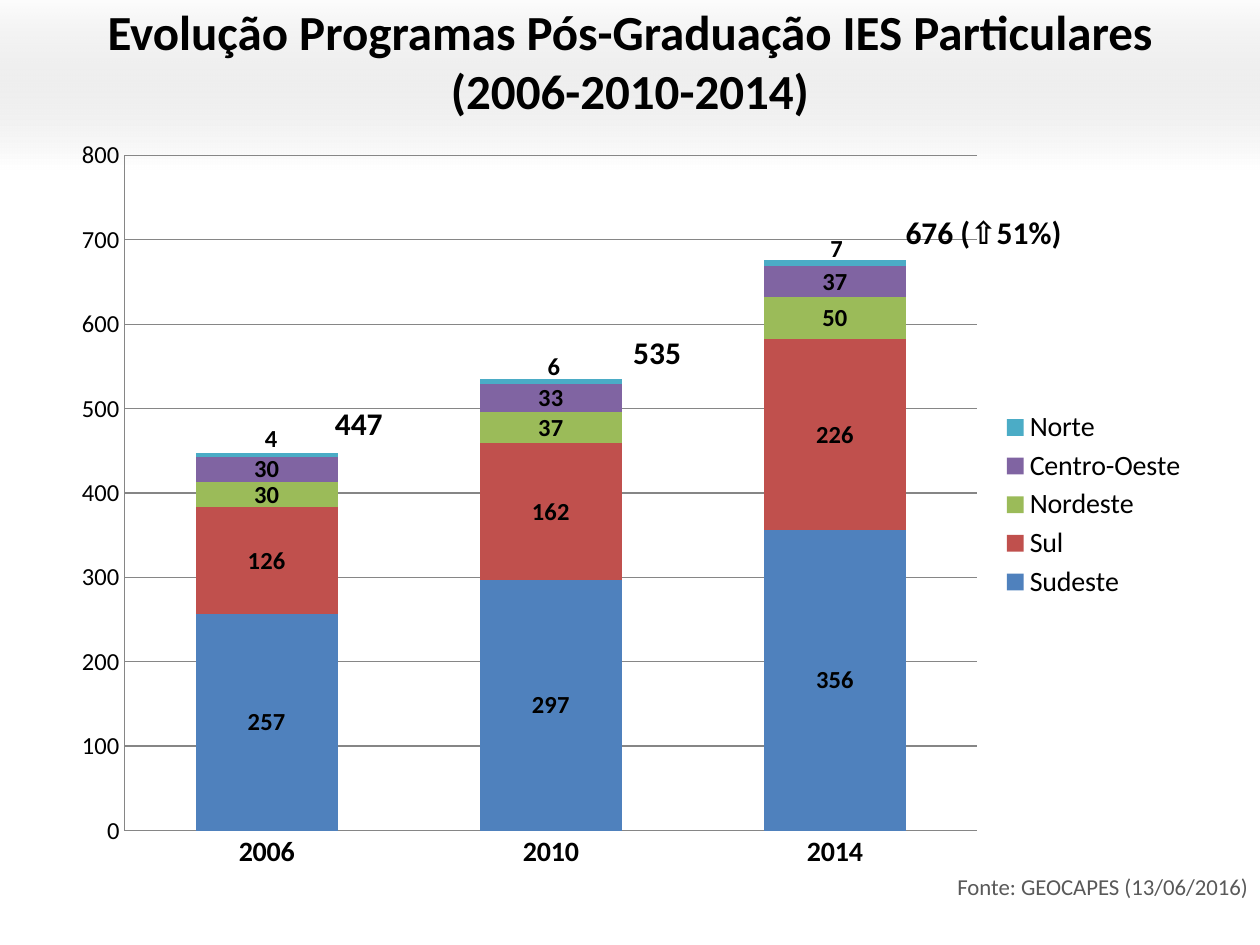
from dataclasses import dataclass

from lxml import etree
from pptx import Presentation
from pptx import util as u
from pptx.chart import data as chart_data
from pptx.dml import color
from pptx.enum import chart as chart_enum
from pptx.enum import shapes, text
from pptx.oxml import ns, parse_xml

FONT = "Calibri"
BLACK = "000000"
GRID = "868686"
YEARS = ["2006", "2010", "2014"]


@dataclass
class Region:
    name: str
    values: tuple[int, ...]
    fill: str
    labelled: bool = True


@dataclass
class Label:
    words: str
    left: float
    top: float
    width: float
    height: float
    size: float
    bold: bool = True
    ink: str = BLACK
    align: text.PP_ALIGN = text.PP_ALIGN.CENTER
    anchor: text.MSO_ANCHOR = text.MSO_ANCHOR.TOP
    line_spacing: float = 1.0


REGIONS = [
    Region("Sudeste", (257, 297, 356), "4F81BD"),
    Region("Sul", (126, 162, 226), "C0504D"),
    Region("Nordeste", (30, 37, 50), "9BBB59"),
    Region("Centro-Oeste", (30, 33, 37), "8064A2"),
    Region("Norte", (4, 6, 7), "4BACC6", labelled=False),
]

LABELS = [
    Label("Evolução Programas Pós-Graduação IES Particulares\n(2006-2010-2014)",
          0, -2, 720, 73, 28, anchor=text.MSO_ANCHOR.MIDDLE),
    Label("4", 138, 238, 34, 22, 14),
    Label("6", 299.5, 197, 34, 22, 14),
    Label("7", 461, 129.5, 34, 22, 14),
    Label("447", 173.5, 227.5, 63, 22, 18),
    Label("535", 344, 186.5, 63, 22, 18),
    Label("676 (⇧51%)", 492, 118, 140, 22, 18),
    Label("Fonte: GEOCAPES (13/06/2016)", 533, 492, 187, 28, 13, bold=False,
          ink="595959", align=text.PP_ALIGN.RIGHT, line_spacing=1.2),
]


def rgb(value: str) -> color.RGBColor:
    return color.RGBColor.from_string(value)


def style_font(font, size: float, bold: bool = False, ink: str = BLACK) -> None:
    font.name = FONT
    font.size = u.Pt(size)
    font.bold = bold
    font.color.rgb = rgb(ink)


def add_header_band(slide) -> None:
    band = slide.shapes.add_shape(
        shapes.MSO_SHAPE.RECTANGLE, u.Pt(0), u.Pt(-3), u.Pt(720), u.Pt(100))
    band.shadow.inherit = False
    band.line.fill.background()
    band.fill.gradient()
    band.fill.gradient_angle = 270
    for stop, shade in zip(band.fill.gradient_stops, ("BFBFBF", "FFFFFF")):
        stop.color.rgb = rgb(shade)
    first_colour = next(band._element.iter(ns.qn("a:srgbClr")))
    etree.SubElement(first_colour, ns.qn("a:alpha")).set("val", "0")


def manual_layout(x: float, y: float, w: float, h: float, inner: bool = False):
    target = '<c:layoutTarget val="inner"/>' if inner else ""
    return parse_xml(
        f'<c:layout {ns.nsdecls("c")}><c:manualLayout>{target}'
        '<c:xMode val="edge"/><c:yMode val="edge"/>'
        f'<c:x val="{x}"/><c:y val="{y}"/><c:w val="{w}"/><c:h val="{h}"/>'
        '</c:manualLayout></c:layout>')


def style_axes(chart) -> None:
    for axis, size, bold in ((chart.category_axis, 16, True),
                             (chart.value_axis, 14, False)):
        axis.major_tick_mark = chart_enum.XL_TICK_MARK.NONE
        axis.minor_tick_mark = chart_enum.XL_TICK_MARK.NONE
        axis.format.line.color.rgb = rgb(GRID)
        axis.format.line.width = u.Pt(0.75)
        style_font(axis.tick_labels.font, size, bold)
    values = chart.value_axis
    values.minimum_scale, values.maximum_scale, values.major_unit = 0, 800, 100
    values.has_major_gridlines = True
    values.major_gridlines.format.line.color.rgb = rgb(GRID)
    values.major_gridlines.format.line.width = u.Pt(0.75)


def style_legend(chart) -> None:
    chart.has_legend = True
    legend = chart.legend
    legend.position = chart_enum.XL_LEGEND_POSITION.RIGHT
    legend.include_in_layout = False
    style_font(legend.font, 16)
    for old in legend._element.findall(ns.qn("c:layout")):
        legend._element.remove(old)
    position = legend._element.find(ns.qn("c:legendPos"))
    position.addnext(manual_layout(0.82, 0.37, 0.17, 0.26))


def add_program_chart(slide) -> None:
    data = chart_data.CategoryChartData()
    data.categories = YEARS
    for region in REGIONS:
        data.add_series(region.name, region.values)
    chart = slide.shapes.add_chart(
        chart_enum.XL_CHART_TYPE.COLUMN_STACKED,
        u.Pt(34), u.Pt(71), u.Pt(653), u.Pt(435), data).chart
    chart.has_title = False
    style_font(chart.font, 10)
    style_axes(chart)
    style_legend(chart)

    plot = chart.plots[0]
    plot.gap_width, plot.overlap = 100, 100
    plot.vary_by_categories = False
    for series, region in zip(plot.series, REGIONS):
        series.format.fill.solid()
        series.format.fill.fore_color.rgb = rgb(region.fill)
        if region.labelled:
            series.data_labels.show_value = True
            style_font(series.data_labels.font, 14, True)

    area = plot._element.getparent()
    for old in area.findall(ns.qn("c:layout")):
        area.remove(old)
    area.insert(0, manual_layout(0.057, 0.041, 0.746, 0.887, inner=True))


def add_label(slide, label: Label) -> None:
    box = slide.shapes.add_textbox(
        u.Pt(label.left), u.Pt(label.top), u.Pt(label.width), u.Pt(label.height))
    frame = box.text_frame
    frame.word_wrap = True
    frame.vertical_anchor = label.anchor
    frame.text = label.words
    for para in frame.paragraphs:
        para.alignment = label.align
        para.line_spacing = label.line_spacing
        for span in para.runs:
            style_font(span.font, label.size, label.bold, label.ink)


def main() -> None:
    deck = Presentation()
    deck.slide_width, deck.slide_height = u.Pt(720), u.Pt(540)
    page = deck.slides.add_slide(deck.slide_layouts[6])
    add_header_band(page)
    add_program_chart(page)
    for label in LABELS:
        add_label(page, label)
    deck.save("out.pptx")


if __name__ == "__main__":
    main()
